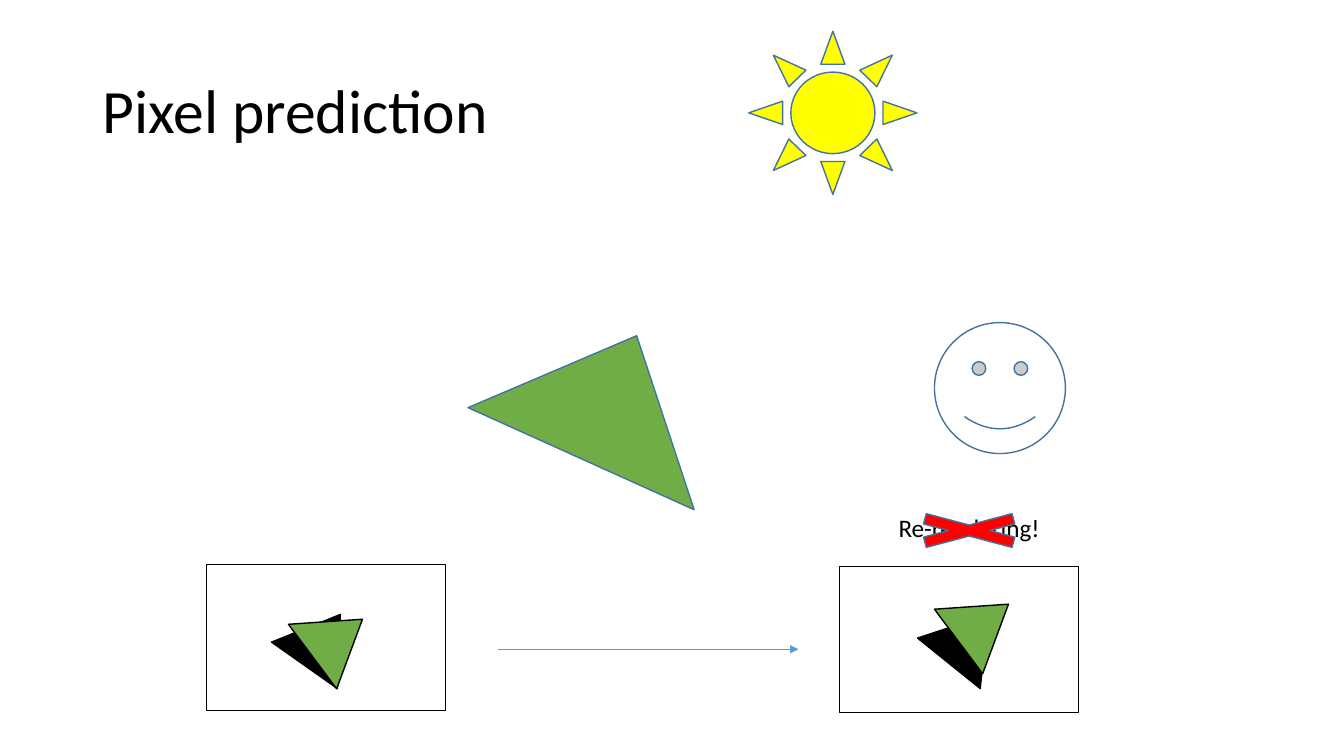
from lxml import etree
from pptx import Presentation
from pptx.dml.color import RGBColor
from pptx.enum.shapes import MSO_CONNECTOR, MSO_SHAPE
from pptx.enum.text import MSO_ANCHOR, MSO_AUTO_SIZE, PP_ALIGN
from pptx.oxml.ns import qn
from pptx.util import Cm, Pt

BLACK = RGBColor(0x00, 0x00, 0x00)
WHITE = RGBColor(0xFF, 0xFF, 0xFF)
GREEN = RGBColor(0x70, 0xAD, 0x47)
YELLOW = RGBColor(0xFF, 0xFF, 0x00)
RED = RGBColor(0xFF, 0x00, 0x00)
OUTLINE = RGBColor(0x43, 0x73, 0x9E)
ARROW_BLUE = RGBColor(0x5B, 0x9B, 0xD5)


def add_figure(shapes, preset, box, fill, line=OUTLINE, rotation=0):
    """Add a preset shape; box is left, top, width, height in cm, fill None is hollow."""
    figure = shapes.add_shape(preset, *map(Cm, box))
    figure.shadow.inherit = False
    figure.rotation = rotation
    if fill is None:
        figure.fill.background()
    else:
        figure.fill.solid()
        figure.fill.fore_color.rgb = fill
    figure.line.color.rgb = line
    figure.line.width = Pt(1)
    return figure


def add_label(shapes, text, box, size):
    label = shapes.add_textbox(*map(Cm, box))
    label.text_frame.word_wrap = True
    paragraph = label.text_frame.paragraphs[0]
    paragraph.text = text
    font = paragraph.runs[0].font
    font.name = "Calibri"
    font.size = Pt(size)
    font.color.rgb = BLACK
    return label.text_frame


prs = Presentation()
prs.slide_width, prs.slide_height = Cm(33.87), Cm(19.05)
slide = prs.slides.add_slide(prs.slide_layouts[6])
shapes = slide.shapes

title = add_label(shapes, "Pixel prediction", (2.34, 1.02, 29.21, 3.68), 44)
title.vertical_anchor = MSO_ANCHOR.MIDDLE
title.paragraphs[0].line_spacing = 0.9

# Scene: viewer, object and light source
add_figure(shapes, MSO_SHAPE.SMILEY_FACE, (23.55, 8.13, 3.3, 3.3), WHITE)
add_figure(shapes, MSO_SHAPE.ISOSCELES_TRIANGLE, (12.22, 8.31, 6.25, 3.4), GREEN,
           rotation=24.3)
add_figure(shapes, MSO_SHAPE.SUN, (18.87, 0.79, 4.24, 4.11), YELLOW)

# Rendered frames: frame corner, shadow corner and rotation, object corner
frames = [
    ((5.21, 14.22), (7.11, 15.34), 35.2, (7.49, 15.29)),
    ((21.16, 14.27), (23.39, 15.32), 38.9, (23.77, 14.91)),
]
for frame_at, shadow_at, shadow_rotation, object_at in frames:
    frame = shapes.add_group_shape().shapes
    add_figure(frame, MSO_SHAPE.RECTANGLE, (*frame_at, 6.02, 3.68), None, BLACK)
    for corner, fill, rotation in ((shadow_at, BLACK, shadow_rotation),
                                   (object_at, GREEN, 53.2)):
        add_figure(frame, MSO_SHAPE.ISOSCELES_TRIANGLE, (*corner, 2.03, 1.57),
                   fill, BLACK, rotation)

prediction = shapes.add_connector(MSO_CONNECTOR.STRAIGHT,
                                  Cm(12.55), Cm(16.36), Cm(20.12), Cm(16.36))
prediction.line.color.rgb = ARROW_BLUE
prediction.line.width = Pt(0.5)
etree.SubElement(prediction.line._get_or_add_ln(), qn("a:tailEnd"), type="triangle")
etree.SubElement(prediction._element.spPr, qn("a:effectLst"))

# Crossed-out label
rerendering = add_label(shapes, "Re-rendering!", (21.49, 12.78, 5.87, 1.02), 18)
rerendering.auto_size = MSO_AUTO_SIZE.SHAPE_TO_FIT_TEXT
rerendering.paragraphs[0].alignment = PP_ALIGN.CENTER
add_figure(shapes, MSO_SHAPE.MATH_MULTIPLY, (22.28, 12.8, 4.29, 1.14), RED)

prs.save("out.pptx")
